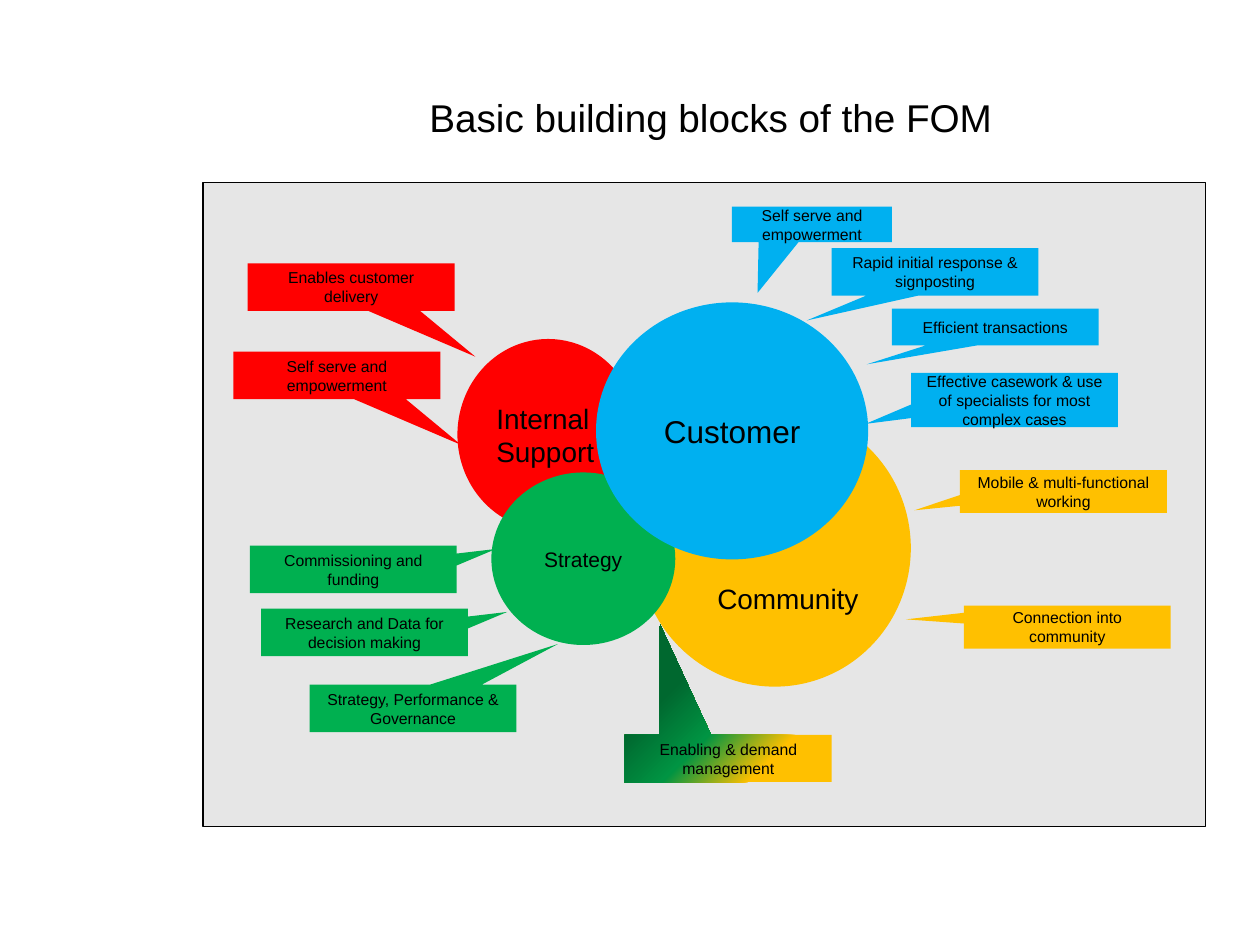
from lxml import etree
from pptx import Presentation
from pptx.dml.color import RGBColor
from pptx.enum.shapes import MSO_SHAPE
from pptx.enum.text import MSO_ANCHOR, PP_ALIGN
from pptx.oxml.ns import qn
from pptx.util import Pt

RECTANGLE = MSO_SHAPE.RECTANGLE
ELLIPSE = MSO_SHAPE.OVAL
CALLOUT = MSO_SHAPE.RECTANGULAR_CALLOUT
LEFT, CENTER, RIGHT = PP_ALIGN.LEFT, PP_ALIGN.CENTER, PP_ALIGN.RIGHT
MIDDLE = MSO_ANCHOR.MIDDLE

BLACK, GREY = "000000", "E6E6E6"
BLUE, RED, GREEN, AMBER = "00B0F0", "FF0000", "00B050", "FFC000"
GREEN_TO_AMBER = [(0, "00682F"), (33, "009443"), (67, AMBER), (100, AMBER)]

CIRCLES = [
    ("Community", 365, 234, 155.5, 158.4, AMBER, 16, RIGHT, 61),
    ("Internal Support", 261.4, 193.7, 103.7, 109.4, RED, 16, LEFT, 3.6),
    ("Strategy", 280.8, 270, 105.1, 98.6, GREEN, 12, CENTER, 3.6),
    ("Customer", 340.6, 172.8, 155.5, 146.9, BLUE, 18, CENTER, 3.6),
]

WIDTH, HEIGHT = 118.2, 27.2
CALLOUTS = [
    ("Self serve and empowerment", 418.3, 118.1, 91.4, 20.2, BLUE, (-0.34, 1.94)),
    ("Rapid initial response & signposting", 475.2, 141.8, WIDTH, HEIGHT, BLUE, (-0.62, 1.02)),
    ("Efficient transactions", 509.6, 176.4, WIDTH, 20.9, BLUE, (-0.62, 1.02)),
    ("Effective casework & use of specialists for most complex cases",
     520.6, 213.1, WIDTH, 31, BLUE, (-0.72, 0.44)),
    ("Mobile & multi-functional working", 548.6, 268.6, WIDTH, 24.5, AMBER, (-0.72, 0.44)),
    ("Connection into community", 550.8, 346.1, WIDTH, 24.5, AMBER, (-0.78, -0.18)),
    ("Enables customer delivery", 141.6, 150.5, WIDTH, HEIGHT, RED, (0.6, 1.46)),
    ("Commissioning and funding", 142.8, 311.8, WIDTH, HEIGHT, GREEN, (0.69, -0.43)),
    ("Strategy, Performance & Governance", 176.9, 391.2, WIDTH, HEIGHT, GREEN, (0.7, -1.35)),
    ("Enabling & demand management",
     357.1, 419.9, WIDTH, HEIGHT, GREEN_TO_AMBER, (-0.33, -2.82)),
    ("Research and Data for decision making", 149.2, 347.8, WIDTH, HEIGHT, GREEN, (0.69, -0.43)),
    ("Self serve and empowerment", 133.4, 200.9, WIDTH, HEIGHT, RED, (0.6, 1.46)),
]


def color(value):
    return RGBColor.from_string(value)


def write_text(shape, text, size=9, align=CENTER, font="Arial", fill=BLACK, top=3.6):
    frame = shape.text_frame
    frame.word_wrap = True
    frame.vertical_anchor = MIDDLE
    frame.margin_top = Pt(top)
    paragraph = frame.paragraphs[0]
    paragraph.alignment = align
    run = paragraph.add_run()
    run.text = text
    run.font.name = font
    run.font.size = Pt(size)
    run.font.color.rgb = color(fill)


def fill_radial(shape, stops):
    shape.fill.gradient()
    gradient = shape.element.spPr.find(qn("a:gradFill"))
    for child in list(gradient):
        gradient.remove(child)
    stop_list = etree.SubElement(gradient, qn("a:gsLst"))
    for position, value in stops:
        stop = etree.SubElement(stop_list, qn("a:gs"), pos=str(position * 1000))
        etree.SubElement(stop, qn("a:srgbClr"), val=value)
    radial = etree.SubElement(gradient, qn("a:path"), path="circle")
    etree.SubElement(radial, qn("a:fillToRect"), r="100000", b="100000")


class Diagram:
    def __init__(self, slide):
        self.slide = slide

    def title(self, text, left, top, width, height):
        title = self.slide.shapes.title
        title.left, title.top = Pt(left), Pt(top)
        title.width, title.height = Pt(width), Pt(height)
        write_text(title, text, size=22.1)

    def shape(self, kind, left, top, width, height, fill):
        shape = self.slide.shapes.add_shape(kind, Pt(left), Pt(top), Pt(width), Pt(height))
        shape.shadow.inherit = False
        shape.line.fill.background()
        if isinstance(fill, str):
            shape.fill.solid()
            shape.fill.fore_color.rgb = color(fill)
        else:
            fill_radial(shape, fill)
        return shape

    def panel(self, left, top, width, height):
        panel = self.shape(RECTANGLE, left, top, width, height, GREY)
        panel.line.color.rgb = color(BLACK)
        panel.line.width = Pt(0.75)

    def circle(self, text, left, top, width, height, fill, size, align, inset):
        circle = self.shape(ELLIPSE, left, top, width, height, fill)
        write_text(circle, text, size=size, align=align, top=inset)

    def callout(self, text, left, top, width, height, fill, tip):
        callout = self.shape(CALLOUT, left, top, width, height, fill)
        callout.adjustments[0], callout.adjustments[1] = tip
        write_text(callout, text)


def main():
    presentation = Presentation()
    presentation.slide_width, presentation.slide_height = Pt(720), Pt(540)
    diagram = Diagram(presentation.slides.add_slide(presentation.slide_layouts[5]))
    diagram.title("Basic building blocks of the FOM", 116, 21.6, 580.3, 90)
    diagram.panel(116, 104.4, 573.1, 367.9)
    for circle in CIRCLES:
        diagram.circle(*circle)
    for callout in CALLOUTS:
        diagram.callout(*callout)
    presentation.save("out.pptx")


if __name__ == "__main__":
    main()
